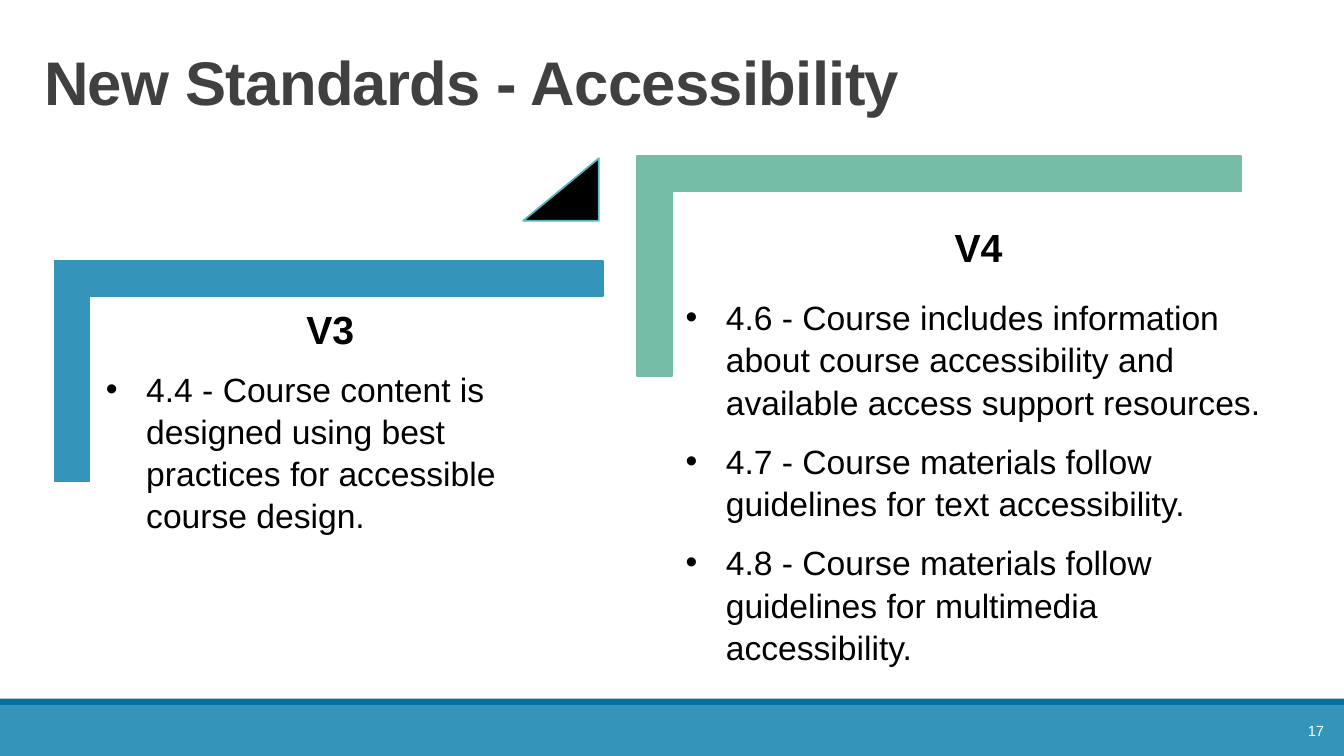
from dataclasses import dataclass
from typing import Any

from lxml.etree import SubElement
from pptx import Presentation
from pptx.dml.color import RGBColor
from pptx.enum.shapes import MSO_SHAPE as Preset
from pptx.enum.text import MSO_ANCHOR as Anchor, PP_ALIGN as Align
from pptx.oxml.ns import qn
from pptx.util import Inches, Pt

BLUE = RGBColor(0x34, 0x94, 0xBA)
DEEP_BLUE = RGBColor(0x07, 0x70, 0xA3)
GREEN = RGBColor(0x75, 0xBD, 0xA7)
TEAL = RGBColor(0x58, 0xB6, 0xC0)
GREY = RGBColor(0x40, 0x40, 0x40)
BLACK = RGBColor(0, 0, 0)
WHITE = RGBColor(0xFF, 0xFF, 0xFF)

deck = Presentation()
deck.slide_width, deck.slide_height = Inches(13.33), Inches(7.5)
page = deck.slides.add_slide(deck.slide_layouts[6])


@dataclass(frozen=True)
class Area:
    """Left, top, width and height in percent of the slide."""
    left: float
    top: float
    width: float
    height: float

    def lengths(self) -> list[int]:
        wide, high = deck.slide_width / 100, deck.slide_height / 100
        return [round(self.left * wide), round(self.top * high),
                round(self.width * wide), round(self.height * high)]


@dataclass(frozen=True)
class Figure:
    area: Area
    fill: RGBColor
    line: RGBColor | None = None
    preset: Preset = Preset.RECTANGLE
    adjust: tuple[float, ...] = ()


@dataclass(frozen=True)
class Version:
    name: str
    bracket: Area
    color: RGBColor
    area: Area
    gap: float
    standards: tuple[str, ...]


def apply(target: Any, values: dict[str, Any]) -> None:
    for name, value in values.items():
        setattr(target, name, value)


def paint(shape: Any, fill: RGBColor, line: RGBColor | None) -> None:
    shape.shadow.inherit = False
    shape.fill.solid()
    shape.fill.fore_color.rgb = fill
    if line is None:
        shape.line.fill.background()
    else:
        shape.line.color.rgb = line
        shape.line.width = Pt(1.25)


def draw_figure(figure: Figure) -> None:
    shape = page.shapes.add_shape(figure.preset, *figure.area.lengths())
    for index, value in enumerate(figure.adjust):
        shape.adjustments[index] = value
    paint(shape, figure.fill, figure.line)


def draw_bracket(area: Area, color: RGBColor) -> None:
    left, top, width, height = area.lengths()
    right, bottom, thick = left + width, top + height, round(height * 0.16)
    outline = page.shapes.build_freeform(left, top)
    outline.add_line_segments([
        (right, top), (right, top + thick), (left + thick, top + thick),
        (left + thick, bottom), (left, bottom)])
    paint(outline.convert_to_shape(), color, color)


def add_box(area: Area, values: dict[str, Any]) -> Any:
    frame = page.shapes.add_textbox(*area.lengths()).text_frame
    apply(frame, {"word_wrap": True, **values})
    return frame


def write(para: Any, text: str, size: float, color: RGBColor,
          bold: bool, values: dict[str, Any]) -> Any:
    apply(para, values)
    span = para.add_run()
    span.text = text
    apply(span.font, {"name": "Arial", "size": Pt(size), "bold": bold})
    span.font.color.rgb = color
    return span


def add_bullet(para: Any) -> None:
    props = para._p.get_or_add_pPr()
    indent = Inches(0.4)
    props.set("marL", str(indent))
    props.set("indent", str(-indent))
    SubElement(props, qn("a:buFont")).set("typeface", "Arial")
    SubElement(props, qn("a:buChar")).set("char", "•")


def draw_version(version: Version) -> None:
    draw_bracket(version.bracket, version.color)
    sides = ("left", "top", "right", "bottom")
    frame = add_box(version.area, {f"margin_{side}": Inches(0.12) for side in sides})
    write(frame.paragraphs[0], version.name, 28, BLACK, True,
          {"alignment": Align.CENTER, "line_spacing": 1.0,
           "space_after": Pt(version.gap)})
    for standard in version.standards:
        para = frame.add_paragraph()
        add_bullet(para)
        write(para, standard, 24, BLACK, False,
              {"line_spacing": 1.05, "space_after": Pt(12)})


FIGURES = [
    # Footer
    Figure(Area(0, 93.33, 100, 6.67), BLUE),
    Figure(Area(0, 92.4, 100, 0.93), DEEP_BLUE),
    # Step up from V3 to V4
    Figure(Area(38.93, 20.93, 5.63, 8.27), BLACK, TEAL, Preset.ISOSCELES_TRIANGLE, (1,)),
]

VERSIONS = [
    Version("V3", Area(4.05, 34.53, 40.81, 29.07), BLUE, Area(6.98, 38.8, 35.18, 38.13), 10, (
        "4.4 - Course content is designed using best practices for accessible course design.",
    )),
    Version("V4", Area(47.37, 20.67, 44.94, 29.07), GREEN, Area(50.11, 27.87, 45.39, 55.73), 18, (
        "4.6 - Course includes information about course accessibility and "
        "available access support resources.",
        "4.7 - Course materials follow guidelines for text accessibility.",
        "4.8 - Course materials follow guidelines for multimedia accessibility.",
    )),
]

for figure in FIGURES:
    draw_figure(figure)
for version in VERSIONS:
    draw_version(version)

# Title
title = add_box(Area(2.55, 4.13, 94.67, 14.8), {"vertical_anchor": Anchor.MIDDLE})
heading = write(title.paragraphs[0], "New Standards - Accessibility", 44, GREY, True,
                {"line_spacing": 0.85})
heading._r.get_or_add_rPr().set("spc", "-50")

# Page number
number = add_box(Area(88.52, 94, 10.73, 5.33), {"vertical_anchor": Anchor.MIDDLE})
write(number.paragraphs[0], "17", 10.5, WHITE, False, {"alignment": Align.RIGHT})

deck.save("out.pptx")
